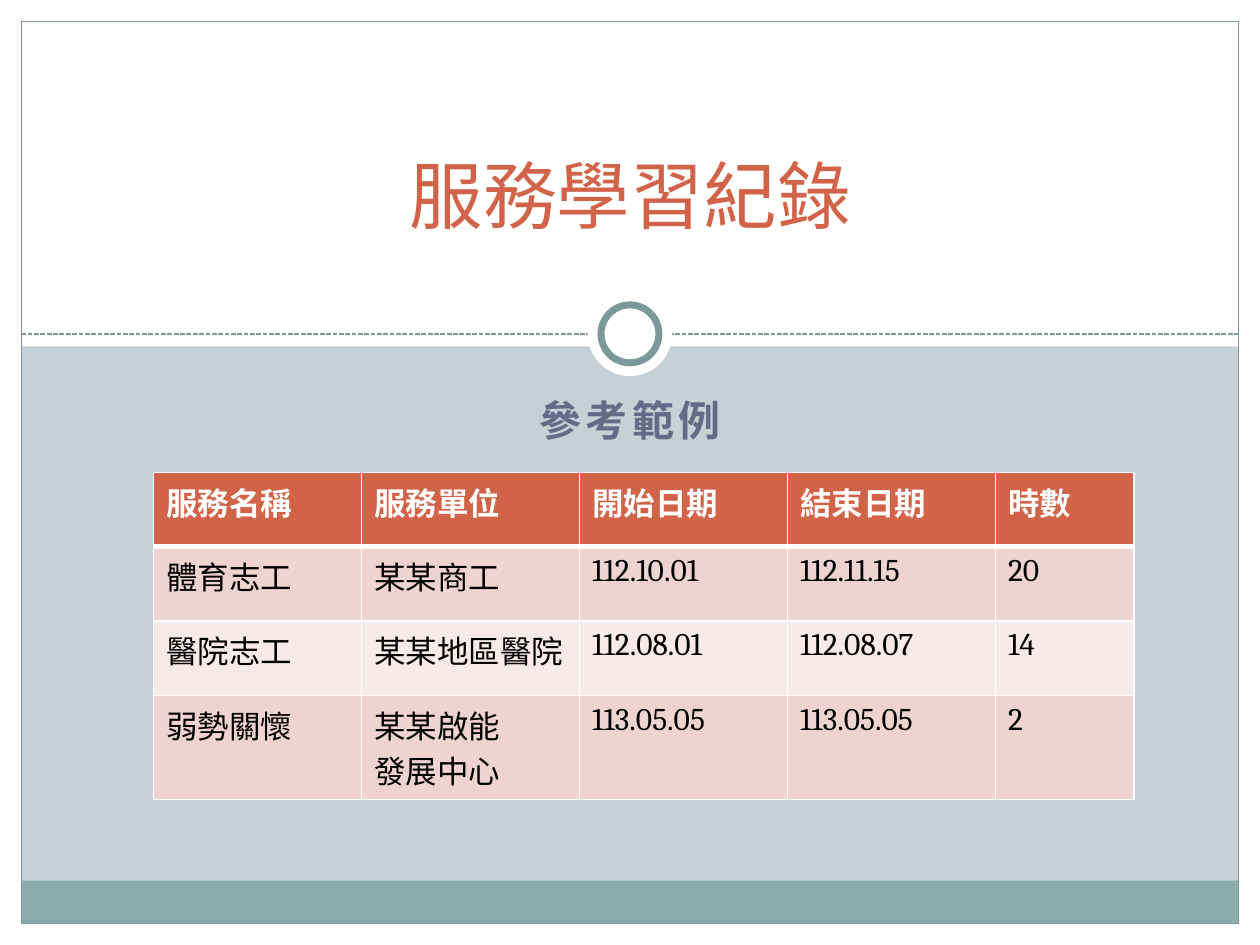
from pptx import Presentation
from pptx.dml.color import RGBColor
from pptx.enum.dml import MSO_LINE
from pptx.enum.shapes import MSO_CONNECTOR, MSO_SHAPE as SHAPE
from pptx.enum.text import MSO_ANCHOR as ANCHOR, PP_ALIGN as ALIGN
from pptx.oxml.ns import qn
from pptx.util import Inches, Pt
from lxml.etree import SubElement

FONT = "Cambria"
WHITE, TEAL, RUST = "FFFFFF", "7C999A", "D16349"
BANDS = ["EED3D0", "F7EAE9"]
W, H, EDGE = 10, 7.5, 0.17

COLS = [1.65, 1.73, 1.65, 1.65, 1.1]
ROWS = [0.59, 0.59, 0.59, 0.82]
RECORDS = [
    ["服務名稱", "服務單位", "開始日期", "結束日期", "時數"],
    ["體育志工", "某某商工", "112.10.01", "112.11.15", "20"],
    ["醫院志工", "某某地區醫院", "112.08.01", "112.08.07", "14"],
    ["弱勢關懷", "某某啟能\n發展中心", "113.05.05", "113.05.05", "2"],
]


def rgb(value):
    return RGBColor.from_string(value)


def box(at):
    return [Inches(v) for v in at]


def style_text(tf, color, **formats):
    for p in tf.paragraphs:
        for r in p.runs:
            r.font.color.rgb = rgb(color)
            for name, value in {"name": FONT, **formats}.items():
                setattr(r.font, name, value)


def add_shape(slide, kind, at, fill=None, line=None, width=1):
    sp = slide.shapes.add_shape(kind, *box(at))
    sp.shadow.inherit = False
    if fill:
        sp.fill.solid()
        sp.fill.fore_color.rgb = rgb(fill)
    else:
        sp.fill.background()
    if line:
        sp.line.color.rgb = rgb(line)
        sp.line.width = Pt(width)
    else:
        sp.line.fill.background()


def add_dashed_line(slide, x1, x2, y):
    line = slide.shapes.add_connector(MSO_CONNECTOR.STRAIGHT, *box([x1, y, x2, y]))
    line.line.color.rgb = rgb(TEAL)
    line.line.width = Pt(0.9)
    line.line.dash_style = MSO_LINE.SQUARE_DOT
    SubElement(line._element.spPr, qn("a:effectLst"))


def fill_placeholder(slide, sp, text, at, anchor, color, **formats):
    slide.shapes._spTree.append(sp._element)  # in front of the frame
    sp.left, sp.top, sp.width, sp.height = box(at)
    tf = sp.text_frame
    tf.text = text
    tf.vertical_anchor = anchor
    tf.paragraphs[0].alignment = ALIGN.CENTER
    style_text(tf, color, **formats)


def set_borders(cell, **widths):
    tcPr = cell._tc.get_or_add_tcPr()
    for side in "LRTB":
        ln = SubElement(tcPr, qn(f"a:ln{side}"), w=str(Pt(widths.get(side, 1))))
        SubElement(SubElement(ln, qn("a:solidFill")), qn("a:srgbClr"), val=WHITE)


def add_records(slide, left, top):
    at = box([left, top, sum(COLS), sum(ROWS)])
    table = slide.shapes.add_table(len(ROWS), len(COLS), *at).table
    for column, width in zip(table.columns, COLS):
        column.width = Inches(width)
    for i, (height, record) in enumerate(zip(ROWS, RECORDS)):
        table.rows[i].height = Inches(height)
        header = i == 0
        for j, text in enumerate(record):
            cell = table.cell(i, j)
            cell.text = text
            set_borders(cell, T=3 if i == 1 else 1, B=3 if header else 1)
            cell.fill.solid()
            cell.fill.fore_color.rgb = rgb(RUST if header else BANDS[(i - 1) % 2])
            style_text(cell.text_frame, WHITE if header else "000000",
                       size=Pt(18), bold=header)


def add_frame(slide):
    # White margins and upper panel
    for at in ([0, H - EDGE, W, EDGE], [W - EDGE, 0, EDGE, H],
               [0, 0, EDGE, H], [0, 0, W, 2.75]):
        add_shape(slide, SHAPE.RECTANGLE, at, WHITE)
    # Footer band, divider and outline
    inner = W - 2 * EDGE
    add_shape(slide, SHAPE.RECTANGLE, [EDGE, 6.99, inner, 0.34], "8CADAE")
    add_dashed_line(slide, EDGE, W - EDGE, 2.65)
    add_shape(slide, SHAPE.RECTANGLE, [EDGE, EDGE, inner, H - 2 * EDGE],
              line=TEAL, width=0.75)
    # Ring on the divider
    for size, line in ((0.67, None), (0.46, TEAL)):
        at = [(W - size) / 2, 2.65 - size / 2, size, size]
        add_shape(slide, SHAPE.OVAL, at, WHITE, line, 4)


def main():
    prs = Presentation()
    prs.slide_width, prs.slide_height = Inches(W), Inches(H)
    slide = prs.slides.add_slide(prs.slide_layouts[0])
    slide.background.fill.solid()
    slide.background.fill.fore_color.rgb = rgb("C5D1D7")
    add_frame(slide)

    # Subtitle and title
    subtitle = slide.placeholders[1]
    fill_placeholder(slide, subtitle, "參考範例", [1.5, 3.08, 7, 0.51],
                     ANCHOR.TOP, "646B86", size=Pt(24), bold=True)
    p = subtitle.text_frame.paragraphs[0]
    p.space_before = Pt(4.8)
    p.runs[0].font._element.set("spc", "250")
    fill_placeholder(slide, slide.shapes.title, "服務學習紀錄",
                     [0.75, 0.42, 8.5, 1.52], ANCHOR.BOTTOM, RUST, size=Pt(42))

    # Service records
    add_records(slide, 1.22, 3.75)
    prs.save("out.pptx")


if __name__ == "__main__":
    main()
